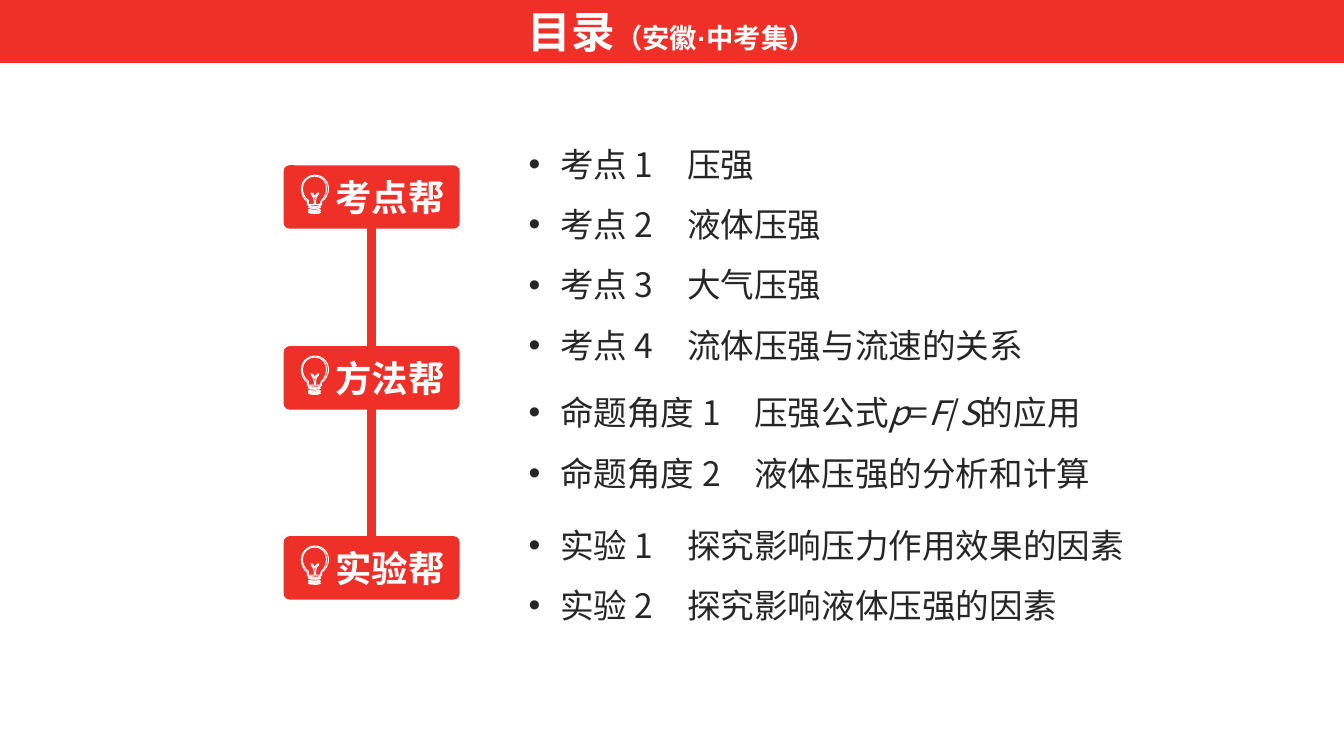
from lxml import etree
from pptx import Presentation
from pptx.dml.color import RGBColor
from pptx.enum import shapes, text
from pptx.oxml import ns
from pptx.util import Pt

RED = RGBColor(0xEE, 0x30, 0x28)
WHITE = RGBColor(0xFF, 0xFF, 0xFF)
INK = RGBColor(0x26, 0x26, 0x26)
HEADING_FONT = "Arial"
LIST_FONT = "Noto Sans CJK SC"

BADGE_LEFT, BADGE_WIDTH, BADGE_HEIGHT = 202.6, 125.7, 45.3
LIST_LEFT, LIST_WIDTH = 370.5, 514
SECTIONS = [
    ("考点帮", 118.1, 84.5, 181.4, [
        ["考点 1　压强"],
        ["考点 2　液体压强"],
        ["考点 3　大气压强"],
        ["考点 4　流体压强与流速的关系"],
    ]),
    ("方法帮", 247.3, 262.1, 94.3, [
        ["命题角度 1　压强公式", "p", "=", "F", "/", "S", "的应用"],
        ["命题角度 2　液体压强的分析和计算"],
    ]),
    ("实验帮", 383, 356.7, 94.3, [
        ["实验 1　探究影响压力作用效果的因素"],
        ["实验 2　探究影响液体压强的因素"],
    ]),
]

BULB_UNIT = 0.72
BULB_GLASS = [
    (13, 0), (21, 0), (27, 6), (27, 13), (27, 18), (24, 24), (20, 26),
    (20, 27), (20, 27), (20, 28), (20, 29), (20, 30), (19, 30),
    (18, 31), (15, 31), (14, 31), (11, 31), (8, 30), (7, 30),
    (6, 30), (6, 29), (6, 28), (6, 27), (6, 26), (6, 26),
    (2, 24), (0, 18), (0, 13), (0, 6), (6, 0), (13, 0),
]
BULB_FILAMENT = [
    (13, 1), (7, 1), (1, 6), (1, 13), (1, 17), (3, 23), (7, 25),
    (7, 25), (7, 26), (7, 27), (7, 28), (7, 28), (7, 29),
    (8, 29), (10, 29), (13, 29), (13, 29), (13, 28), (13, 28),
    (13, 25), (12, 21), (10, 19), (9, 18), (10, 17), (11, 18),
    (12, 19), (13, 20), (13, 22), (14, 20), (15, 19), (16, 18),
    (17, 17), (18, 18), (17, 19), (14, 21), (14, 25), (14, 28),
    (14, 28), (14, 29), (14, 29), (16, 29), (18, 29), (19, 29),
    (19, 29), (19, 28), (19, 28), (19, 26), (19, 26), (20, 25),
    (23, 23), (25, 17), (25, 13), (25, 6), (20, 1), (13, 1),
]
BULB_THREAD = [
    (8, 0), (9, 1), (17, 1), (18, 0), (19, 0), (19, 0), (19, 1),
    (18, 2), (16, 2), (14, 2), (11, 2), (8, 2), (7, 1),
    (7, 1), (7, 0), (8, 0),
]
BULB_THREAD_TOPS = (36, 34, 31)


def bend_segments(freeform):
    segments = list(freeform._element.iter(ns.qn("a:lnTo")))
    for first in range(0, len(segments), 3):
        curve = etree.Element(ns.qn("a:cubicBezTo"))
        segments[first].addprevious(curve)
        for segment in segments[first:first + 3]:
            curve.append(segment[0])
            segment.getparent().remove(segment)


def add_bulb(slide, left, top):
    threads = [[(x, y + offset) for x, y in BULB_THREAD] for offset in BULB_THREAD_TOPS]
    contours = threads + [BULB_FILAMENT, BULB_GLASS]
    builder = slide.shapes.build_freeform(*contours[0][0], scale=float(Pt(BULB_UNIT)))
    for index, contour in enumerate(contours):
        if index:
            builder.move_to(*contour[0])
        builder.add_line_segments(contour[1:], close=True)
    bulb = builder.convert_to_shape(Pt(left), Pt(top))
    bend_segments(bulb)
    bulb.shadow.inherit = False
    bulb.fill.solid()
    bulb.fill.fore_color.rgb = RED
    bulb.line.color.rgb = WHITE
    bulb.line.width = Pt(0.75)


def add_title_bar(slide, left, top, width, height):
    title = slide.shapes.title
    title.left, title.top, title.width, title.height = map(Pt, (left, top, width, height))
    title.fill.solid()
    title.fill.fore_color.rgb = RED
    frame = title.text_frame
    frame.auto_size = text.MSO_AUTO_SIZE.NONE
    frame.vertical_anchor = text.MSO_ANCHOR.MIDDLE
    paragraph = frame.paragraphs[0]
    paragraph.alignment = text.PP_ALIGN.CENTER
    for words, size in (("目录", 31.2), ("（安徽·中考集）", 19.5)):
        run = paragraph.add_run()
        run.text = words
        run.font.size = Pt(size)
        run.font.name = HEADING_FONT
        run.font.bold = True
        run.font.color.rgb = WHITE


def add_badge(slide, label, left, top, width, height):
    badge = slide.shapes.add_shape(
        shapes.MSO_SHAPE.ROUNDED_RECTANGLE, Pt(left), Pt(top), Pt(width), Pt(height))
    badge.adjustments[0] = 0.095
    badge.shadow.inherit = False
    badge.fill.solid()
    badge.fill.fore_color.rgb = RED
    badge.line.fill.background()
    frame = badge.text_frame
    frame.vertical_anchor = text.MSO_ANCHOR.MIDDLE
    frame.margin_right = Pt(9.36)
    paragraph = frame.paragraphs[0]
    paragraph.text = label
    paragraph.alignment = text.PP_ALIGN.RIGHT
    paragraph.font.size = Pt(26)
    paragraph.font.name = HEADING_FONT
    paragraph.font.bold = True
    paragraph.font.color.rgb = WHITE
    add_bulb(slide, left + 12.7, top + 7)
    return badge


def add_topic_list(slide, topics, left, top, width, height):
    box = slide.shapes.add_textbox(Pt(left), Pt(top), Pt(width), Pt(height))
    frame = box.text_frame
    frame.word_wrap = True
    frame.auto_size = text.MSO_AUTO_SIZE.SHAPE_TO_FIT_TEXT
    for index, pieces in enumerate(topics):
        paragraph = frame.add_paragraph() if index else frame.paragraphs[0]
        paragraph.line_spacing = 1.5
        properties = paragraph._p.get_or_add_pPr()
        properties.set("marL", str(Pt(22.5)))
        properties.set("indent", str(-Pt(22.5)))
        bullet_font = etree.SubElement(properties, ns.qn("a:buFont"))
        bullet_font.set("typeface", "Arial")
        etree.SubElement(properties, ns.qn("a:buChar")).set("char", "•")
        paragraph.font.size = Pt(24)
        paragraph.font.name = LIST_FONT
        paragraph.font.color.rgb = INK
        for piece in pieces:
            run = paragraph.add_run()
            run.text = piece
            if piece in ("p", "F", "S"):
                run.font.italic = True


def add_spine(slide, center, top, bottom):
    spine = slide.shapes.add_connector(
        shapes.MSO_CONNECTOR.STRAIGHT, Pt(center), Pt(top), Pt(center), Pt(bottom))
    spine.line.color.rgb = RED
    spine.line.width = Pt(6)
    etree.SubElement(spine._element.spPr, ns.qn("a:effectLst"))
    return spine


def add_contents(slide):
    spine = add_spine(slide, BADGE_LEFT + BADGE_WIDTH / 2, 125.3, SECTIONS[-1][1])
    for label, badge_top, list_top, list_height, topics in SECTIONS:
        badge = add_badge(slide, label, BADGE_LEFT, badge_top, BADGE_WIDTH, BADGE_HEIGHT)
        add_topic_list(slide, topics, LIST_LEFT, list_top, LIST_WIDTH, list_height)
    spine.end_connect(badge, 0)


def main():
    presentation = Presentation()
    presentation.slide_width, presentation.slide_height = Pt(960), Pt(540)
    slide = presentation.slides.add_slide(presentation.slide_layouts[5])
    add_title_bar(slide, 0, 0, 960, 45)
    add_contents(slide)
    presentation.save("out.pptx")


if __name__ == "__main__":
    main()
